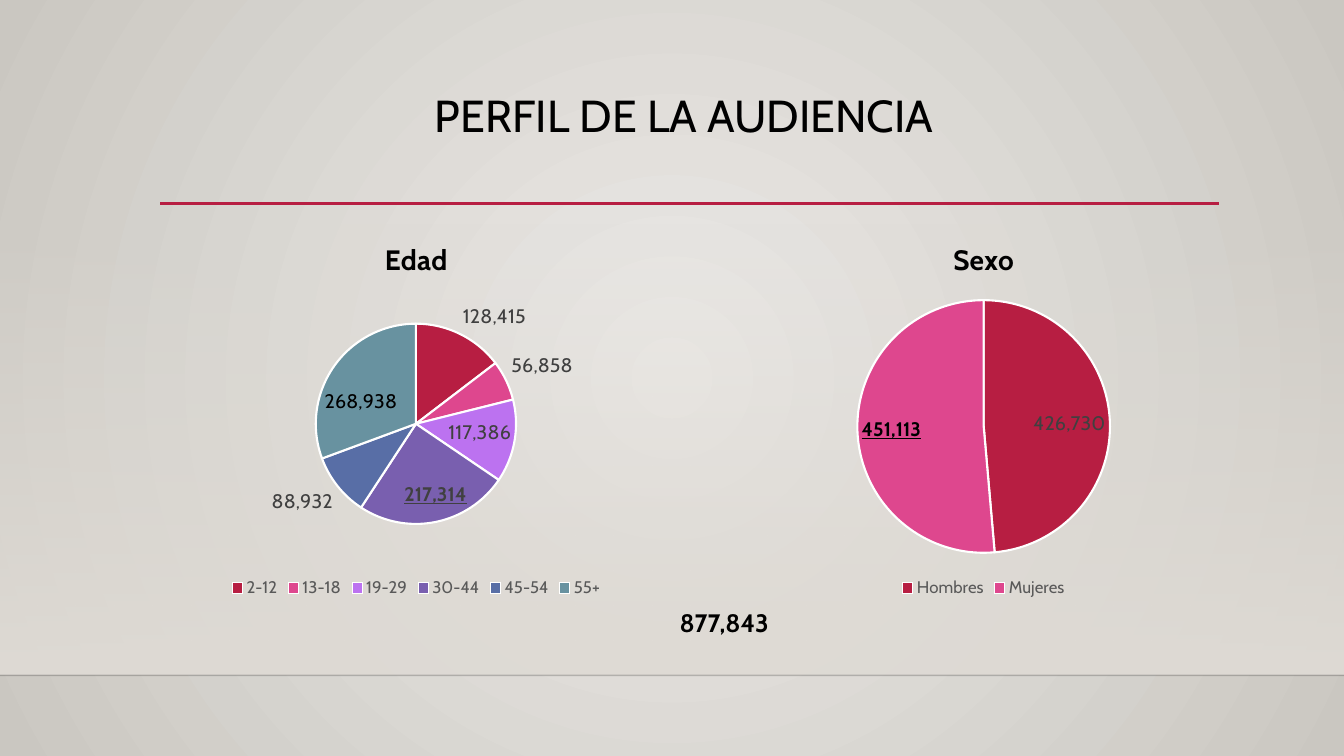
import lxml.etree
import pptx
import pptx.chart.data
import pptx.dml.color
import pptx.enum.chart
import pptx.enum.shapes
import pptx.enum.text
import pptx.oxml
import pptx.oxml.ns
import pptx.util

Cm = pptx.util.Cm
Pt = pptx.util.Pt
qn = pptx.oxml.ns.qn

HUES = {
    "black": "000000", "dark": "404040", "gray": "595959", "white": "FFFFFF",
    "glow": "ECEAE7", "edge": "CAC7C1", "sand": "DFDBD5",
    "red": "B71E42", "pink": "DE478E", "lilac": "BC72F0",
    "purple": "795FAF", "blue": "586EA6", "teal": "6892A0",
}
SLICES = ["red", "pink", "lilac", "purple", "blue", "teal"]
WIDE, HIGH = 33.87, 19.05


class Page:
    face = "Cabin"
    form = "#,##0"

    def __init__(self, slide):
        self.slide = slide

    def hue(self, name):
        return pptx.dml.color.RGBColor.from_string(HUES[name])

    def font(self, font, size, name, bold=False, under=False):
        font.name = self.face
        font.size = Pt(size)
        font.bold = bold
        font.underline = under
        font.color.rgb = self.hue(name)

    def fade(self, root, index, part):
        tone = list(root.iter(qn("a:srgbClr")))[index]
        lxml.etree.SubElement(tone, qn("a:alpha"), val=str(part * 1000))

    def blend(self, fill, root, names):
        fill.gradient()
        for stop, name in zip(fill.gradient_stops, names):
            stop.color.rgb = self.hue(name)
        return next(root.iter(qn("a:gradFill")))

    def ground(self):
        grad = self.blend(self.slide.background.fill, self.slide.element, ["glow", "edge"])
        grad.remove(grad.find(qn("a:lin")))
        ring = lxml.etree.SubElement(grad, qn("a:path"), path="circle")
        lxml.etree.SubElement(ring, qn("a:fillToRect"), l="50000", t="50000", r="50000", b="50000")

    def panel(self, *box):
        shape = self.slide.shapes.add_shape(
            pptx.enum.shapes.MSO_SHAPE.RECTANGLE, *map(Cm, box))
        shape.shadow.inherit = False
        shape.line.fill.background()
        grad = self.blend(shape.fill, shape.element, ["sand", "sand"])
        grad.find(qn("a:lin")).set("ang", "5400000")
        self.fade(grad, 0, 0)

    def rule(self, left, right, y, name, width, part=100):
        line = self.slide.shapes.add_connector(
            pptx.enum.shapes.MSO_CONNECTOR.STRAIGHT, Cm(left), Cm(y), Cm(right), Cm(y))
        line.line.color.rgb = self.hue(name)
        line.line.width = Pt(width)
        props = line.element.spPr
        if part < 100:
            self.fade(props, 0, part)
        lxml.etree.SubElement(props, qn("a:effectLst"))

    def text(self, words, box, size, bold=False, space=1.0):
        frame = self.slide.shapes.add_textbox(*map(Cm, box)).text_frame
        frame.word_wrap = True
        para = frame.paragraphs[0]
        para.text = words
        para.alignment = pptx.enum.text.PP_ALIGN.CENTER
        para.line_spacing = space
        self.font(para.font, size, "black", bold)

    def pie(self, title, box, data, marks):
        best = pptx.enum.chart.XL_LABEL_POSITION.BEST_FIT
        feed = pptx.chart.data.CategoryChartData(number_format=self.form)
        feed.categories = list(data)
        feed.add_series(title, list(data.values()))
        chart = self.slide.shapes.add_chart(
            pptx.enum.chart.XL_CHART_TYPE.PIE, *map(Cm, box), feed).chart
        self.font(chart.font, 10, "black")
        chart.has_title = True
        chart.chart_title.include_in_layout = False
        head = chart.chart_title.text_frame
        head.text = title
        self.font(head.paragraphs[0].font, 20, "black", True)
        chart.has_legend = True
        chart.legend.position = pptx.enum.chart.XL_LEGEND_POSITION.BOTTOM
        chart.legend.include_in_layout = False
        self.font(chart.legend.font, 12, "gray")

        plot = chart.plots[0]
        plot.vary_by_categories = True
        ring = plot.series[0]
        tags = ring.data_labels
        tags.show_value = True
        tags.number_format = self.form
        tags.number_format_is_linked = False
        tags.position = best
        self.font(tags.font, 14, "dark")
        for i, name in zip(range(len(data)), SLICES):
            style = ring.points[i].format
            style.fill.solid()
            style.fill.fore_color.rgb = self.hue(name)
            style.line.color.rgb = self.hue("white")
            style.line.width = Pt(1.5)
        for i, (name, strong) in marks.items():
            tag = ring.points[i].data_label
            self.font(tag.font, 14, name, strong, strong)
            tag.position = best


def main():
    deck = pptx.Presentation()
    deck.slide_width, deck.slide_height = Cm(WIDE), Cm(HIGH)
    page = Page(deck.slides.add_slide(deck.slide_layouts[6]))
    page.ground()
    page.panel(0, 5.61, WIDE, 11.4)
    page.rule(0, WIDE, 17.02, "black", 1, 20)
    page.rule(4.04, 30.73, 5.13, "red", 2.5)
    page.text("PERFIL DE LA AUDIENCIA ", (4.04, 2.24, 26.67, 2.92), 32, space=0.9)
    ages = {"2-12": 128415, "13-18": 56858, "19-29": 117386,
            "30-44": 217314, "45-54": 88932, "55+": 268938}
    page.pie("Edad", (4.04, 5.59, 12.9, 9.58), ages,
             {3: ("dark", True), 5: ("black", False)})
    page.pie("Sexo", (19.38, 5.59, 10.82, 9.58),
             {"Hombres": 426730, "Mujeres": 451113}, {1: ("black", True)})
    page.text("877,843", (16.61, 15.19, 3.28, 1.02), 18, True)
    deck.save("out.pptx")


if __name__ == "__main__":
    main()
